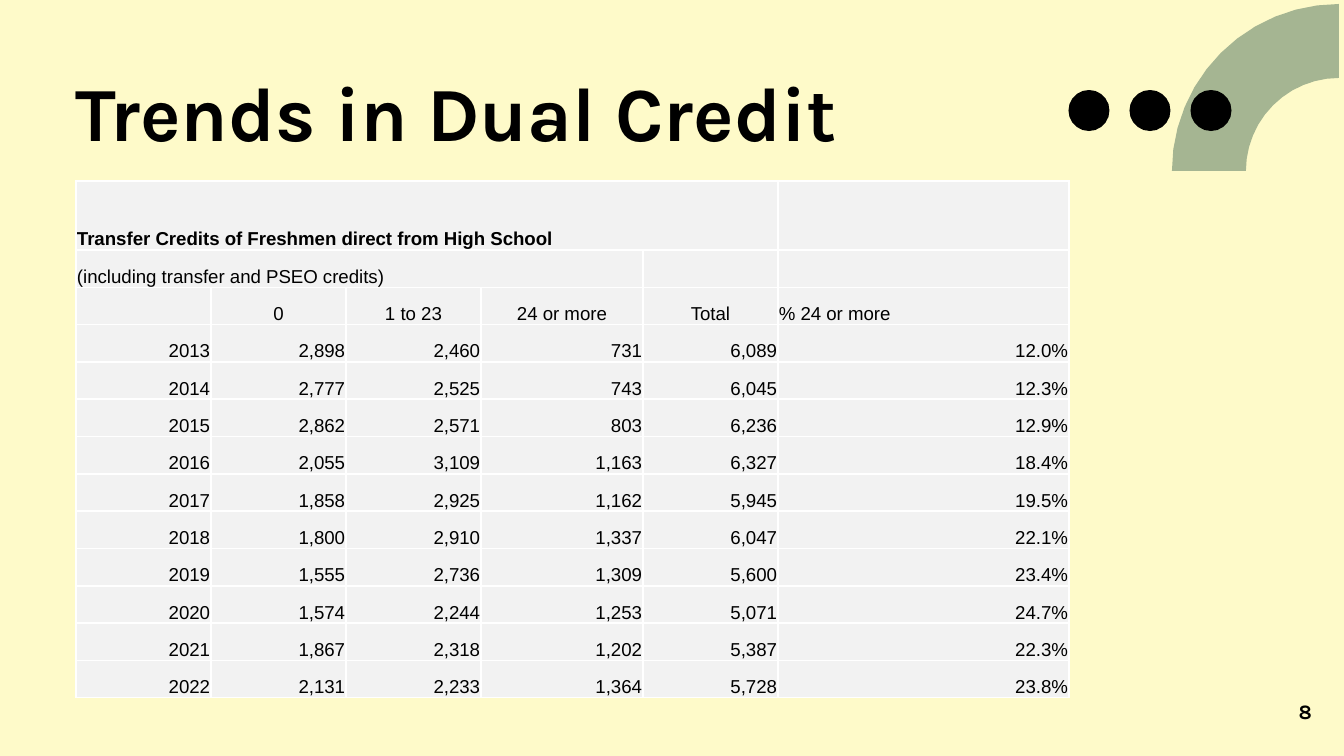
"""Build the slide on trends in dual credit."""
from math import cos, pi, sin

from lxml.etree import SubElement
from pptx import Presentation
from pptx.dml.color import RGBColor
from pptx.enum.text import MSO_ANCHOR, PP_ALIGN
from pptx.oxml.ns import qn
from pptx.util import Emu, Pt

COLORS = {
    "background": "FEFAC9",
    "arch": "A5B592",
    "ink": "000000",
    "cell": "F2F2F2",
    "border": "FFFFFF",
}
SLIDE_WIDTH = 1344
SCALE = 9144000 / SLIDE_WIDTH


def px(length):
    return Emu(round(length * SCALE))


def style_text(paragraph, font_name, size, bold, alignment):
    paragraph.alignment = alignment
    for run in paragraph.runs:
        run.font.name = font_name
        run.font.size = Pt(size)
        run.font.bold = bold
        run.font.color.rgb = RGBColor.from_string(COLORS["ink"])


presentation = Presentation()
presentation.slide_width = px(SLIDE_WIDTH)
presentation.slide_height = px(756)
slide = presentation.slides.add_slide(presentation.slide_layouts[6])
slide.background.fill.solid()
slide.background.fill.fore_color.rgb = RGBColor.from_string(COLORS["background"])

labels = [
    ("Trends in Dual Credit", (76, 75, 953, 106), 41, PP_ALIGN.LEFT, MSO_ANCHOR.TOP, 0.9),
    ("8", (1231, 698, 81, 27), 11, PP_ALIGN.RIGHT, MSO_ANCHOR.MIDDLE, 1.0),
]
for text, box, size, alignment, anchor, line_spacing in labels:
    text_frame = slide.shapes.add_textbox(*map(px, box)).text_frame
    text_frame.word_wrap = True
    text_frame.vertical_anchor = anchor
    text_frame.margin_left = text_frame.margin_right = 0
    text_frame.margin_top = text_frame.margin_bottom = 0
    text_frame.text = text
    paragraph = text_frame.paragraphs[0]
    paragraph.line_spacing = line_spacing
    style_text(paragraph, "Karla", size, True, alignment)

arch_steps, dot_steps = 12, 20
quarter = [pi / 2 * step / arch_steps for step in range(arch_steps + 1)]
circle = [2 * pi * step / dot_steps for step in range(dot_steps)]
arch_outline = [
    (px(1339 - radius * cos(angle)), px(171 - radius * sin(angle)))
    for radius, angles in ((167, quarter), (93, quarter[::-1]))
    for angle in angles
]
dot_outlines = [
    [(px(center - 20.5 * cos(angle)), px(110.5 - 20.5 * sin(angle))) for angle in circle]
    for center in (1089, 1150, 1211)
]
for outlines, color in (([arch_outline], "arch"), (dot_outlines, "ink")):
    builder = slide.shapes.build_freeform(*outlines[0][0])
    for outline in outlines:
        builder.move_to(*outline[0])
        builder.add_line_segments(outline[1:], close=True)
    shape = builder.convert_to_shape()
    shape.shadow.inherit = False
    shape.fill.solid()
    shape.fill.fore_color.rgb = RGBColor.from_string(COLORS[color])
    shape.line.fill.background()

rows = [
    ("Transfer Credits of Freshmen direct from High School", "", "", "", "", ""),
    ("(including transfer and PSEO credits)", "", "", "", "", ""),
    ("", "0", "1 to 23", "24 or more", "Total", "% 24 or more"),
    ("2013", "2,898", "2,460", "731", "6,089", "12.0%"),
    ("2014", "2,777", "2,525", "743", "6,045", "12.3%"),
    ("2015", "2,862", "2,571", "803", "6,236", "12.9%"),
    ("2016", "2,055", "3,109", "1,163", "6,327", "18.4%"),
    ("2017", "1,858", "2,925", "1,162", "5,945", "19.5%"),
    ("2018", "1,800", "2,910", "1,337", "6,047", "22.1%"),
    ("2019", "1,555", "2,736", "1,309", "5,600", "23.4%"),
    ("2020", "1,574", "2,244", "1,253", "5,071", "24.7%"),
    ("2021", "1,867", "2,318", "1,202", "5,387", "22.3%"),
    ("2022", "2,131", "2,233", "1,364", "5,728", "23.8%"),
]
column_widths = [135, 135, 135, 162, 135, 291]
heading_height, lower_height = 69, 448
header_row = 2

table = slide.shapes.add_table(
    len(rows), len(column_widths), px(76), px(181),
    px(sum(column_widths)), px(heading_height + lower_height),
).table
table.first_row = False
table.horz_banding = False
for column, width in zip(table.columns, column_widths):
    column.width = px(width)
for row in table.rows:
    row.height = px(lower_height / (len(rows) - 1))
table.rows[0].height = px(heading_height)
table.cell(0, 0).merge(table.cell(0, 4))
table.cell(1, 0).merge(table.cell(1, 3))

for row_index, values in enumerate(rows):
    for column_index, value in enumerate(values):
        cell = table.cell(row_index, column_index)
        cell.vertical_anchor = MSO_ANCHOR.BOTTOM
        cell.margin_left = cell.margin_right = cell.margin_top = px(1)
        cell.margin_bottom = 0
        properties = cell._tc.get_or_add_tcPr()
        for side in ("a:lnL", "a:lnR", "a:lnT", "a:lnB"):
            border = SubElement(properties, qn(side), w=str(Pt(1)))
            border_fill = SubElement(border, qn("a:solidFill"))
            SubElement(border_fill, qn("a:srgbClr"), val=COLORS["border"])
        cell.fill.solid()
        cell.fill.fore_color.rgb = RGBColor.from_string(COLORS["cell"])

        paragraph = cell.text_frame.paragraphs[0]
        if value:
            paragraph.text = value
        if row_index > header_row:
            alignment = PP_ALIGN.RIGHT
        elif row_index == header_row and column_index < len(values) - 1:
            alignment = PP_ALIGN.CENTER
        else:
            alignment = PP_ALIGN.LEFT
        style_text(paragraph, "Arial", 10, row_index == 0, alignment)
        paragraph._p.get_or_add_endParaRPr().set("sz", "1000")

presentation.save("out.pptx")
